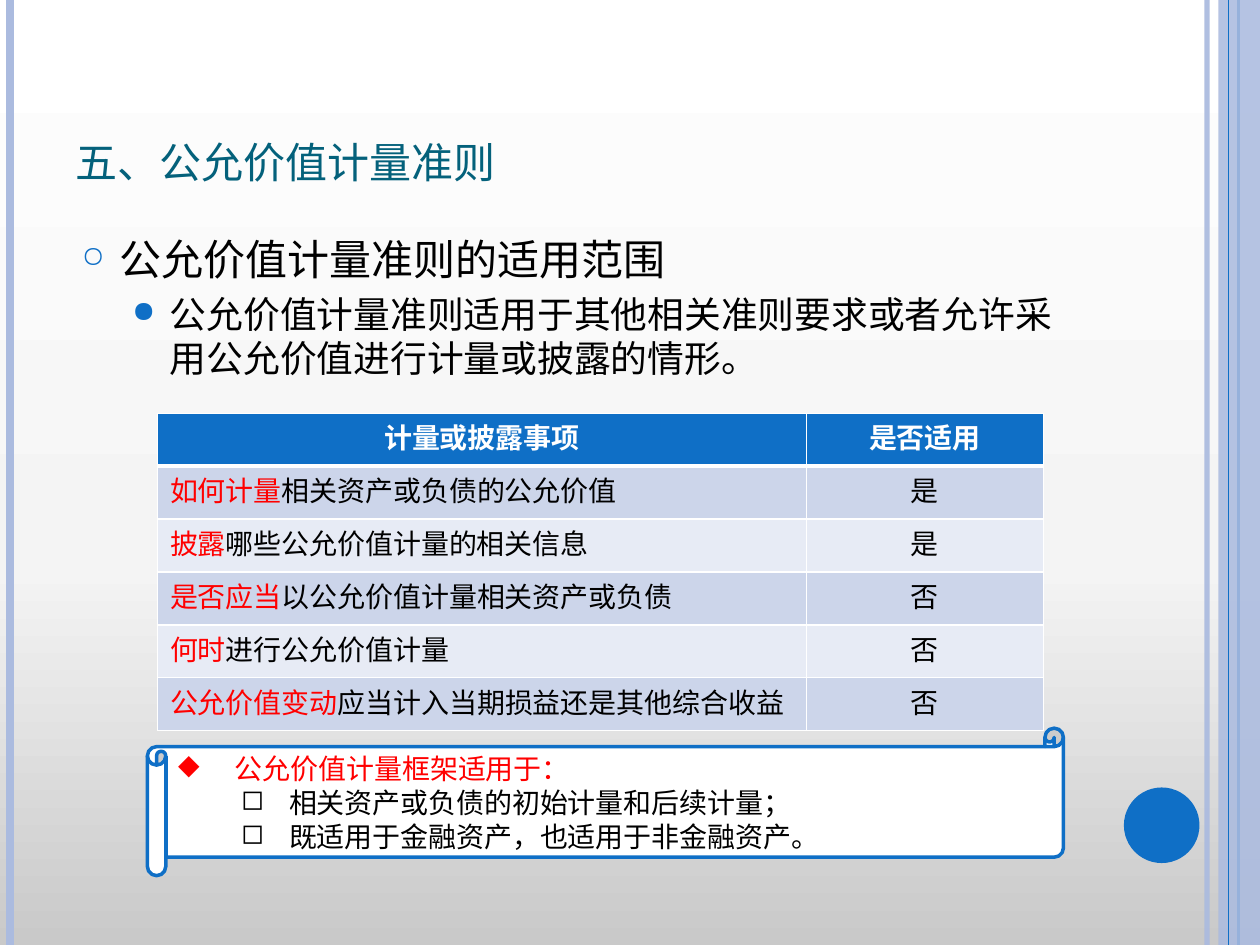
"""Build the slide on the scope of the fair value measurement standard."""
from copy import deepcopy
from dataclasses import dataclass

from lxml.etree import Element, SubElement
from pptx import Presentation
from pptx.dml.color import RGBColor
from pptx.enum.shapes import MSO_CONNECTOR, MSO_SHAPE
from pptx.enum.text import MSO_ANCHOR, MSO_AUTO_SIZE, PP_ALIGN
from pptx.oxml.ns import qn
from pptx.util import Inches, Pt

STRAIGHT = MSO_CONNECTOR.STRAIGHT
RECTANGLE, OVAL, SCROLL = MSO_SHAPE.RECTANGLE, MSO_SHAPE.OVAL, MSO_SHAPE.HORIZONTAL_SCROLL
LEFT, CENTER = PP_ALIGN.LEFT, PP_ALIGN.CENTER
TOP, MIDDLE, BOTTOM = MSO_ANCHOR.TOP, MSO_ANCHOR.MIDDLE, MSO_ANCHOR.BOTTOM
NO_AUTOFIT = MSO_AUTO_SIZE.NONE

BLACK = RGBColor(0x00, 0x00, 0x00)
WHITE = RGBColor(0xFF, 0xFF, 0xFF)
RED = RGBColor(0xFF, 0x00, 0x00)
BLUE = RGBColor(0x0F, 0x6F, 0xC6)
PALE_BLUE = RGBColor(0xAB, 0xBB, 0xDF)
TEAL = RGBColor(0x04, 0x61, 0x7B)
BANDS = (RGBColor(0xCC, 0xD5, 0xEA), RGBColor(0xE7, 0xEB, 0xF5))
BACKDROP = ((0, RGBColor(0xC9, 0xC9, 0xC9)), (0.4, RGBColor(0xF4, 0xF4, 0xF4)), (1, WHITE))
FONT = "Karla"
SLIDE_WIDTH, SLIDE_HEIGHT = 10, 7.5
ROW_HEIGHT = 0.42
COLUMN_WIDTHS = (5.15, 1.88)


@dataclass
class Stripe:
    x: float
    color: RGBColor
    width: float
    opacity: int = 100


@dataclass
class Item:
    text: str
    size: float
    color: RGBColor
    bullet: str
    bullet_color: RGBColor
    indent: float
    hanging: float
    level: int = 0
    bullet_size: int = 100
    space_before: float = 0


@dataclass
class Matter:
    emphasis: str
    rest: str
    answer: str


OUTER_STRIPES = (Stripe(9.58, PALE_BLUE, 3, 93), Stripe(0.08, PALE_BLUE, 4.5), Stripe(9.83, BLUE, 1.5))
INNER_STRIPE = Stripe(9.75, BLUE, 0.75)
SCOPE = (
    Item("公允价值计量准则的适用范围", 24, BLACK, "○", BLUE, 0.3, 0.3, bullet_size=70),
    Item("公允价值计量准则适用于其他相关准则要求或者允许采用公允价值进行计量或披露的情形。",
         21, BLACK, "●", BLUE, 0.7, 0.3, level=1, bullet_size=80, space_before=4.2),
)
FRAMEWORK = (
    Item("公允价值计量框架适用于：", 16, RED, "◆", RED, 0.45, 0.45),
    Item("相关资产或负债的初始计量和后续计量；", 16, BLACK, "◻", BLACK, 0.88, 0.38, level=1),
    Item("既适用于金融资产，也适用于非金融资产。", 16, BLACK, "◻", BLACK, 0.88, 0.38, level=1),
)
HEADINGS = ("计量或披露事项", "是否适用")
MATTERS = (
    Matter("如何计量", "相关资产或负债的公允价值", "是"),
    Matter("披露", "哪些公允价值计量的相关信息", "是"),
    Matter("是否应当", "以公允价值计量相关资产或负债", "否"),
    Matter("何时", "进行公允价值计量", "否"),
    Matter("公允价值变动", "应当计入当期损益还是其他综合收益", "否"),
)


def add_text(paragraph, text: str, *, size: float, color: RGBColor, bold=False, small_caps=False) -> None:
    span = paragraph.add_run()
    span.text = text
    span.font.name, span.font.size, span.font.bold = FONT, Pt(size), bold
    span.font.color.rgb = color
    properties = span.font._element
    SubElement(properties, qn("a:ea"), typeface=FONT)
    if small_caps:
        properties.set("cap", "small")


def set_opacity(fill_owner, percent: int) -> None:
    color = fill_owner.find(".//" + qn("a:srgbClr"))
    SubElement(color, qn("a:alpha"), val=str(percent * 1000))


def paint_background(page) -> None:
    fill = page.background.fill
    fill.gradient()
    fill.gradient_angle = 90
    stops = page._element.find(".//" + qn("a:gsLst"))
    stops.append(deepcopy(stops[0]))
    for stop, (position, color) in zip(fill.gradient_stops, BACKDROP):
        stop.position, stop.color.rgb = position, color


def draw_stripe(page, stripe: Stripe) -> None:
    x = Inches(stripe.x)
    line = page.shapes.add_connector(STRAIGHT, x, 0, x, Inches(SLIDE_HEIGHT))
    line.line.color.rgb, line.line.width = stripe.color, Pt(stripe.width)
    properties = line._element.spPr
    if stripe.opacity < 100:
        set_opacity(properties, stripe.opacity)
    SubElement(properties, qn("a:effectLst"))


def draw_shape(page, kind, left: float, top: float, width: float, height: float, fill: RGBColor):
    shape = page.shapes.add_shape(kind, Inches(left), Inches(top), Inches(width), Inches(height))
    shape.shadow.inherit = False
    shape.fill.solid()
    shape.fill.fore_color.rgb = fill
    shape.line.fill.background()
    return shape


def write_items(frame, items: tuple[Item, ...], anchor) -> None:
    frame.word_wrap, frame.vertical_anchor = True, anchor
    for index, item in enumerate(items):
        paragraph = frame.add_paragraph() if index else frame.paragraphs[0]
        paragraph.level, paragraph.alignment = item.level, LEFT
        paragraph.line_spacing = Pt(round(item.size * 1.21, 1))
        paragraph.space_before = Pt(item.space_before)
        add_text(paragraph, item.text, size=item.size, color=item.color)
        properties = paragraph._p.get_or_add_pPr()
        properties.set("marL", str(Inches(item.indent)))
        properties.set("indent", str(-Inches(item.hanging)))
        bullet_color = SubElement(properties, qn("a:buClr"))
        SubElement(bullet_color, qn("a:srgbClr"), val=str(item.bullet_color))
        SubElement(properties, qn("a:buSzPct"), val=str(item.bullet_size * 1000))
        SubElement(properties, qn("a:buChar"), char=item.bullet)


def format_cell(cell, fill: RGBColor, bottom_width: float = 1):
    cell.fill.solid()
    cell.fill.fore_color.rgb = fill
    cell.vertical_anchor = MIDDLE
    properties = cell._tc.get_or_add_tcPr()
    edges = (("L", 1), ("R", 1), ("T", 1), ("B", bottom_width))
    for index, (side, width) in enumerate(edges):
        edge = Element(qn("a:ln" + side), w=str(Pt(width)))
        SubElement(SubElement(edge, qn("a:solidFill")), qn("a:srgbClr"), val=str(WHITE))
        properties.insert(index, edge)
    return cell.text_frame.paragraphs[0]


def draw_table(page) -> None:
    rows = len(MATTERS) + 1
    table = page.shapes.add_table(rows, len(HEADINGS), Inches(1.25), Inches(3.28),
                                  Inches(sum(COLUMN_WIDTHS)), Inches(ROW_HEIGHT * rows)).table
    for column, width in zip(table.columns, COLUMN_WIDTHS):
        column.width = Inches(width)
    for index, heading in enumerate(HEADINGS):
        paragraph = format_cell(table.cell(0, index), BLUE, bottom_width=3)
        paragraph.alignment = CENTER
        add_text(paragraph, heading, size=16, color=WHITE, bold=True)
    for row, matter in enumerate(MATTERS, start=1):
        band = BANDS[(row - 1) % 2]
        paragraph = format_cell(table.cell(row, 0), band)
        add_text(paragraph, matter.emphasis, size=16, color=RED)
        add_text(paragraph, matter.rest, size=16, color=BLACK)
        paragraph = format_cell(table.cell(row, 1), band)
        paragraph.alignment = CENTER
        add_text(paragraph, matter.answer, size=16, color=BLACK)


def main() -> None:
    deck = Presentation()
    deck.slide_width, deck.slide_height = Inches(SLIDE_WIDTH), Inches(SLIDE_HEIGHT)
    page = deck.slides.add_slide(deck.slide_layouts[5])
    paint_background(page)
    for stripe in OUTER_STRIPES:
        draw_stripe(page, stripe)
    band = draw_shape(page, RECTANGLE, 9.67, 0, 0.33, SLIDE_HEIGHT, PALE_BLUE)
    set_opacity(band._element.spPr, 87)
    draw_stripe(page, INNER_STRIPE)
    draw_shape(page, OVAL, 8.92, 6.25, 0.6, 0.6, BLUE)

    title = page.shapes.title
    title.left, title.top, title.width, title.height = map(Inches, (0.5, 0.3, 8.17, 1.25))
    title.text_frame.vertical_anchor, title.text_frame.auto_size = BOTTOM, NO_AUTOFIT
    heading = title.text_frame.paragraphs[0]
    heading.alignment = LEFT
    add_text(heading, "五、公允价值计量准则", size=30, color=TEAL, small_caps=True)

    box = page.shapes.add_textbox(*map(Inches, (0.55, 1.8, 8.17, 5.33)))
    write_items(box.text_frame, SCOPE, TOP)
    draw_table(page)
    scroll = draw_shape(page, SCROLL, 1.17, 5.78, 7.27, 1.17, WHITE)
    scroll.line.color.rgb, scroll.line.width = BLUE, Pt(2)
    write_items(scroll.text_frame, FRAMEWORK, MIDDLE)
    deck.save("out.pptx")


if __name__ == "__main__":
    main()
